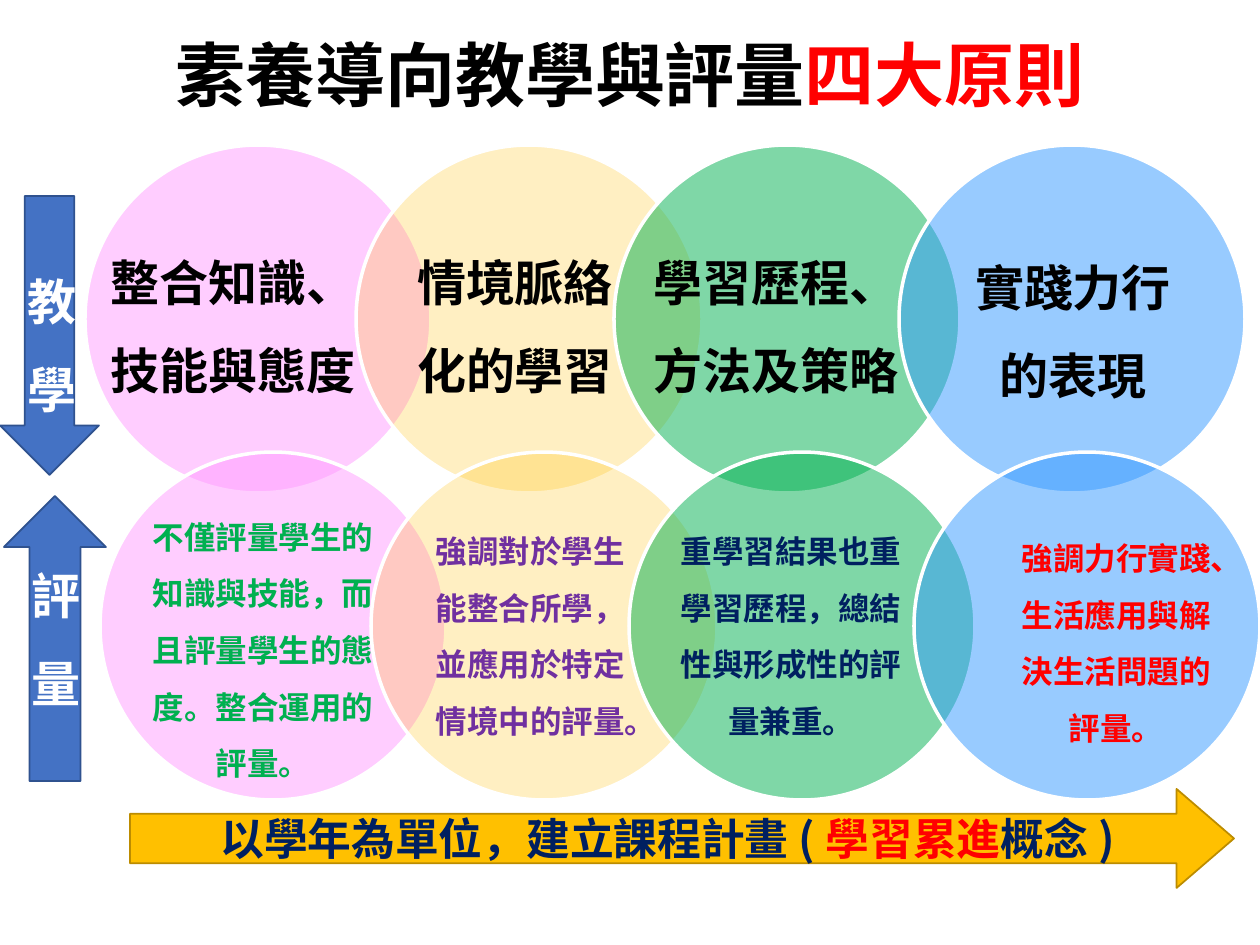
from lxml import etree
from pptx import Presentation, util as u
from pptx.dml.color import RGBColor
from pptx.enum import shapes, text
from pptx.oxml.ns import qn

PX = u.Inches(1) / 126
FONT = "Noto Sans CJK SC"
COLORS = {
    "black": "000000", "white": "FFFFFF", "red": "FF0000", "navy": "002060",
    "purple": "7030A0", "leaf": "00B050", "pink": "FF99FF", "gold": "FFC000",
    "sky": "3399FF", "blue": "4472C4", "blue_edge": "2F528F", "gold_edge": "BC8C00",
}

# Content
HEADING = [("素養導向教學與評量", "black"), ("四大原則", "red")]
BANNER = [("以學年為單位，建立課程計畫(", "navy"), ("學習累進", "red"), ("概念)", "navy")]
# Columns: circle left, colour, opacity in percent, text width
COLUMNS = [
    (85, "pink", 49, 284),
    (356, "gold", 24, 234),
    (614, "leaf", 50, 284),
    (899, "sky", 50, 234),
]
# Rows: circle top, shift to the right, text size, (text, colour, left, top) per column
ROWS = [
    (145, 0, 28, [
        ("整合知識、\n技能與態度", "black", 91, 185),
        ("情境脈絡化的學習", "black", 398, 185),
        ("學習歷程、\n方法及策略", "black", 634, 185),
        ("實踐力行的表現", "black", 956, 190),
    ]),
    (452, 15, 18, [
        ("不僅評量學生的知識與技能，而且評量學生的態度。整合運用的評量。", "leaf", 121, 514),
        ("強調對於學生能整合所學，並應用於特定情境中的評量。", "purple", 413, 500),
        ("重學習結果也重學習歷程，總結性與形成性的評量兼重。", "navy", 649, 500),
        ("強調力行實踐、生活應用與解決生活問題的評量。", "red", 999, 507),
    ]),
]
CIRCLE_SIZE = (346, 348)
TEXT_HEIGHT = 253
# Side arrows: label, preset, arrow box, label box
SIDE_ARROWS = [
    ("教學", shapes.MSO_SHAPE.DOWN_ARROW, (0, 196, 99, 279), (9, 166, 82, 329)),
    ("評量", shapes.MSO_SHAPE.UP_ARROW, (4, 496, 102, 285), (13, 449, 76, 350)),
]


def px(*lengths):
    return [round(length * PX) for length in lengths]


def rgb(name):
    return RGBColor.from_string(COLORS[name])


def format_run(run, size, color):
    run.font.size = u.Pt(size)
    run.font.bold = True
    run.font.color.rgb = rgb(color)
    run.font.name = FONT
    etree.SubElement(run._r.get_or_add_rPr(), qn("a:ea"), typeface=FONT)


def write_runs(frame, parts, size):
    frame.word_wrap = True
    frame.auto_size = text.MSO_AUTO_SIZE.NONE
    frame.vertical_anchor = text.MSO_ANCHOR.MIDDLE
    paragraph = frame.paragraphs[0]
    paragraph.alignment = text.PP_ALIGN.CENTER
    for words, color in parts:
        run = paragraph.add_run()
        run.text = words
        format_run(run, size, color)


def add_label(slide, box, words, size, color):
    frame = slide.shapes.add_textbox(*px(*box)).text_frame
    frame.word_wrap = True
    frame.vertical_anchor = text.MSO_ANCHOR.MIDDLE
    frame.margin_left = frame.margin_right = u.Inches(0.15)
    frame.margin_top = frame.margin_bottom = u.Inches(0.04)
    frame.text = words
    for paragraph in frame.paragraphs:
        paragraph.alignment = text.PP_ALIGN.CENTER
        paragraph.line_spacing = 1.5
        for run in paragraph.runs:
            format_run(run, size, color)


def add_figure(slide, preset, box, fill, line, line_width, opacity=100):
    figure = slide.shapes.add_shape(preset, *px(*box))
    figure.shadow.inherit = False
    figure.fill.solid()
    figure.fill.fore_color.rgb = rgb(fill)
    figure.line.color.rgb = rgb(line)
    figure.line.width = u.Pt(line_width)
    if opacity < 100:
        color = figure._element.spPr.find(qn("a:solidFill"))[0]
        etree.SubElement(color, qn("a:alpha"), val=str(opacity * 1000))
    return figure


def main():
    deck = Presentation()
    deck.slide_width, deck.slide_height = px(1260, 945)
    slide = deck.slides.add_slide(deck.slide_layouts[5])

    # Title
    heading = slide.shapes.title
    heading.left, heading.top, heading.width, heading.height = px(0, 25, 1260, 97)
    write_runs(heading.text_frame, HEADING, 40)

    # Four principles: teaching above, assessment below
    for circle_top, shift, size, cells in ROWS:
        for column, (words, color, left, top) in zip(COLUMNS, cells):
            circle_left, fill, opacity, width = column
            add_figure(slide, shapes.MSO_SHAPE.OVAL,
                       (circle_left + shift, circle_top, *CIRCLE_SIZE),
                       fill, "white", 2, opacity)
            add_label(slide, (left, top, width, TEXT_HEIGHT), words, size, color)

    # Side arrows
    for words, preset, arrow_box, label_box in SIDE_ARROWS:
        add_figure(slide, preset, arrow_box, "blue", "blue_edge", 1)
        add_label(slide, label_box, words, 28, "white")

    # Banner arrow
    banner = add_figure(slide, shapes.MSO_SHAPE.RIGHT_ARROW, (130, 789, 1104, 99),
                        "gold", "gold_edge", 1)
    banner.adjustments[1] = 0.58
    write_runs(banner.text_frame, BANNER, 25)

    deck.save("out.pptx")


if __name__ == "__main__":
    main()
